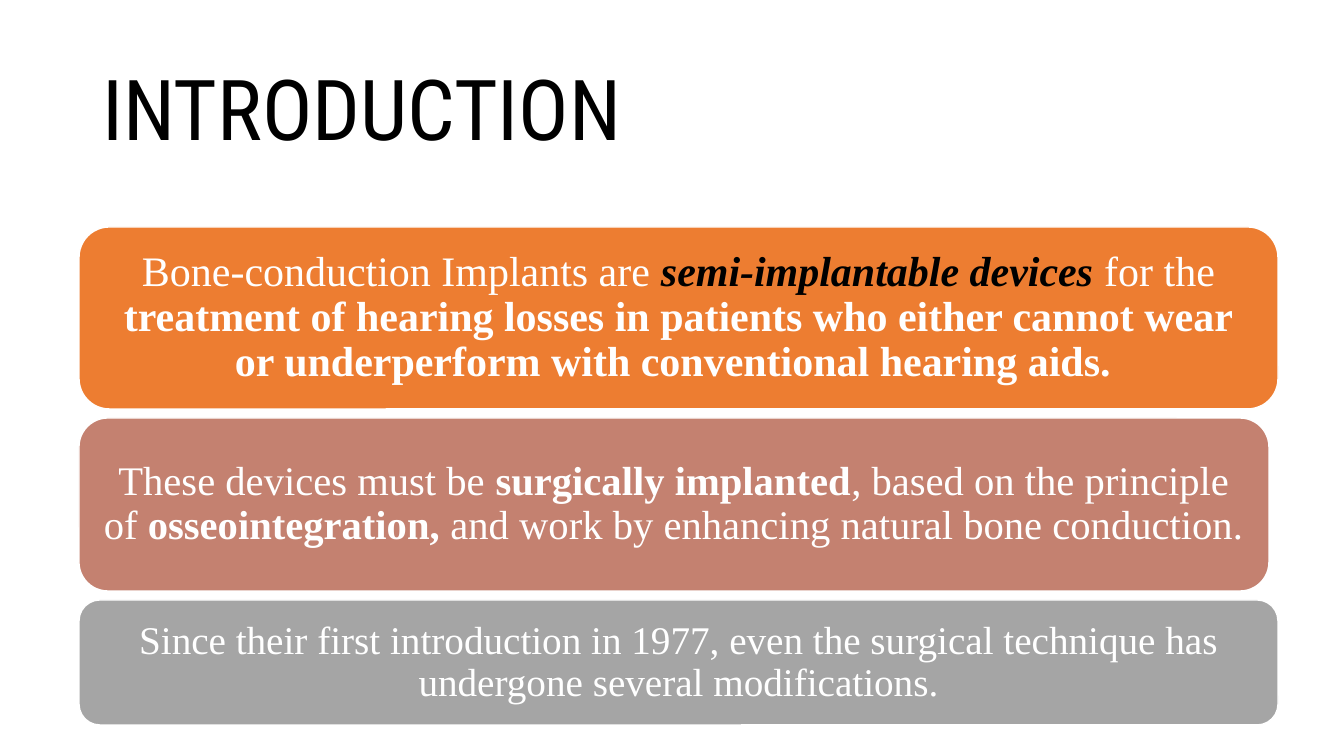
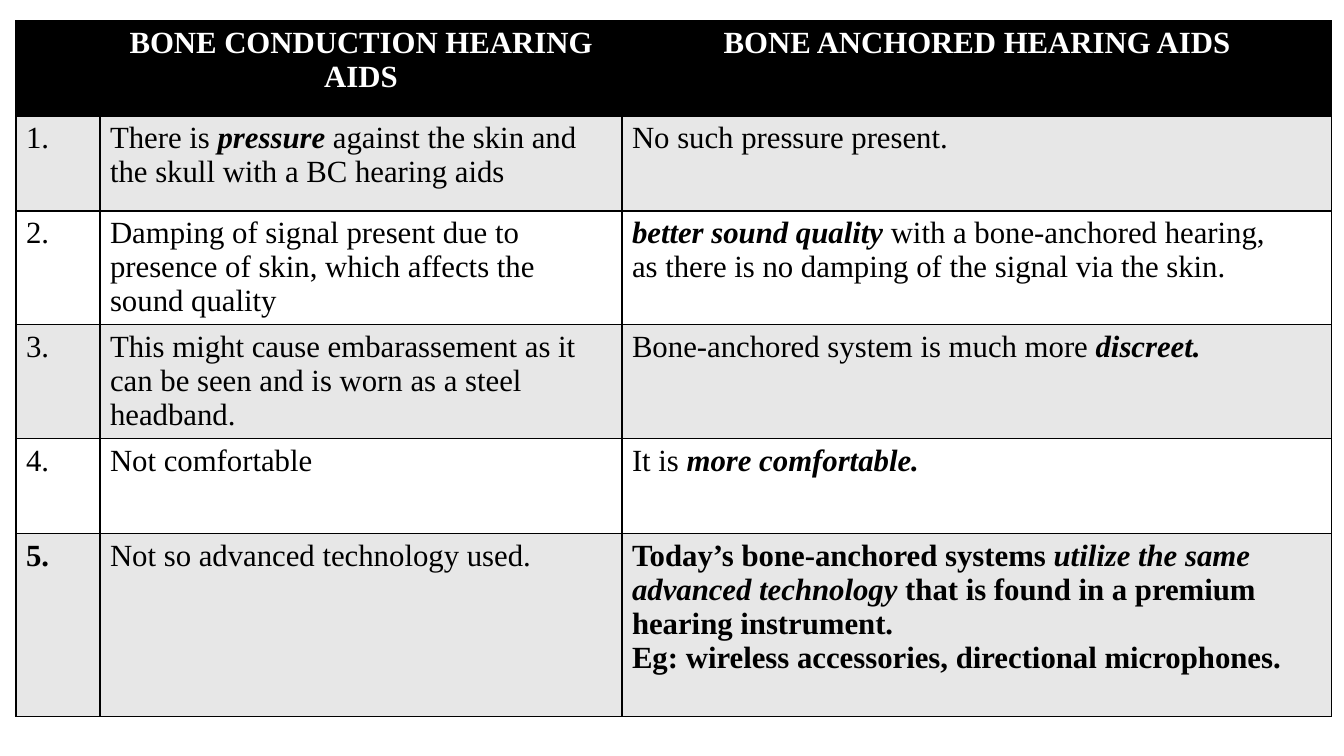
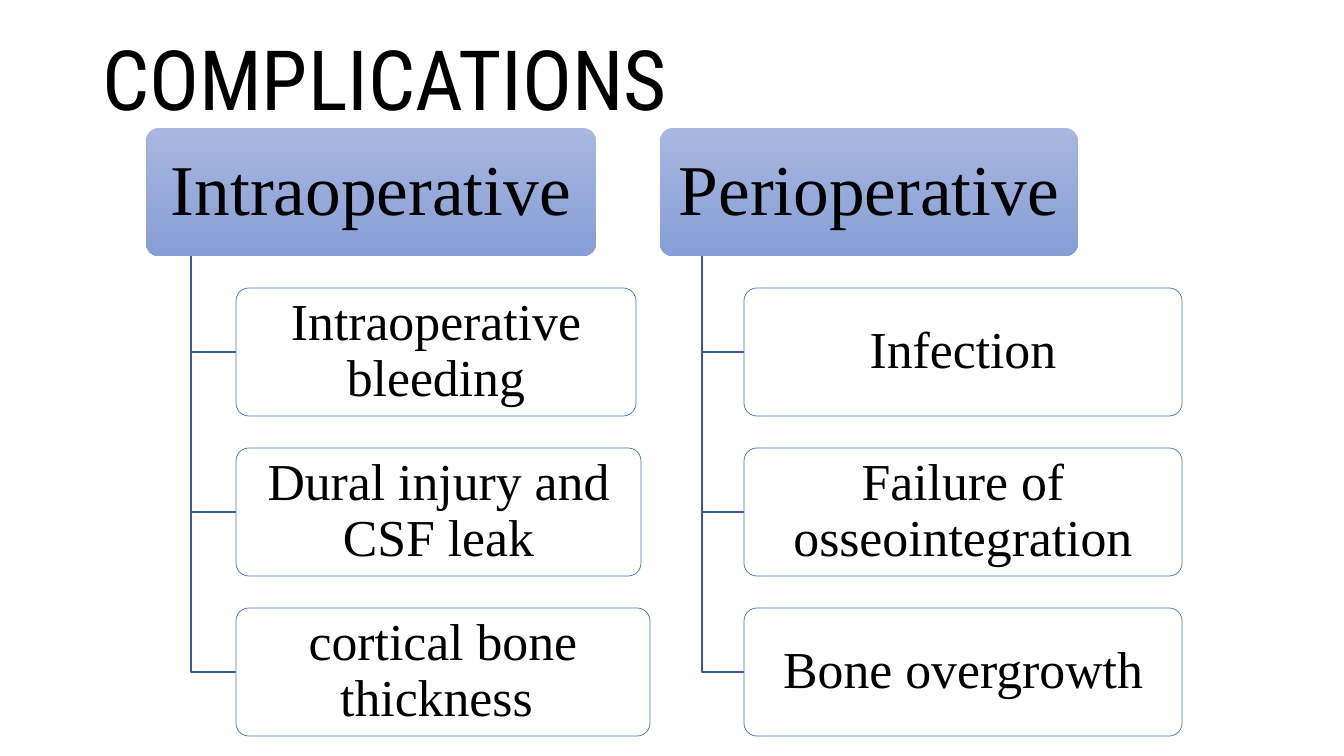
"""Build three slides on bone-conduction hearing implants."""
from dataclasses import dataclass

from lxml import etree
from pptx import Presentation
from pptx.dml.color import RGBColor
from pptx.enum.shapes import MSO_SHAPE
from pptx.enum.text import MSO_ANCHOR, MSO_AUTO_SIZE, PP_ALIGN
from pptx.oxml.ns import qn
from pptx.util import Emu, Pt

ROUNDED = MSO_SHAPE.ROUNDED_RECTANGLE
MIDDLE = MSO_ANCHOR.MIDDLE
NO_AUTOFIT = MSO_AUTO_SIZE.NONE
LEFT, CENTER = PP_ALIGN.LEFT, PP_ALIGN.CENTER
TITLE_ONLY, BLANK = 5, 6


@dataclass(frozen=True)
class Theme:
    title_font: str = "Roboto Condensed"
    body_font: str = "Times New Roman"
    black: str = "000000"
    white: str = "FFFFFF"
    band: str = "E7E7E7"
    header_top: str = "A8B7DF"
    header_bottom: str = "889ED7"
    box_line: str = "4472C4"
    branch_line: str = "365B9D"
    table_size: float = 22
    header_size: float = 51
    box_size: float = 37
    thin: float = 0.5
    line: float = 1


THEME = Theme()
SPAN_STYLES = {
    "plain": {},
    "bold": {"bold": True},
    "strong": {"bold": True, "italic": True},
    "dark": {"bold": True, "italic": True, "color": THEME.black},
    "head": {"bold": True, "color": THEME.white},
}

SLIDE_SIZE = (1344, 756)
STATEMENT_LEFT, STATEMENT_TOP, STATEMENT_GAP = 79, 227, 9
STATEMENTS = [
    {"width": 1199, "height": 182, "fill": "ED7D31", "size": 30, "spans": [
        ("Bone-conduction Implants are ", "plain"),
        ("semi-implantable devices ", "dark"),
        ("for the ", "plain"),
        ("treatment of hearing losses in patients who either cannot wear "
         "or underperform with conventional hearing aids. ", "bold")]},
    {"width": 1190, "height": 173, "fill": "C48170", "size": 29, "spans": [
        ("These devices must be ", "plain"),
        ("surgically implanted", "bold"),
        (", based on the principle of ", "plain"),
        ("osseointegration,", "bold"),
        (" and work by enhancing natural bone conduction. ", "plain")]},
    {"width": 1199, "height": 125, "fill": "A5A5A5", "size": 28, "spans": [
        ("Since their first introduction in 1977, even the surgical technique "
         "has undergone several modifications.", "plain")]},
]

TABLE_LEFT, TABLE_TOP = 16, 21
COLUMN_WIDTHS = [84, 522, 710]
ROW_HEIGHTS = [95, 95, 114, 114, 95, 183]
TABLE_ROWS = [
    [[[]], [[("BONE CONDUCTION HEARING AIDS", "head")]],
     [[("BONE ANCHORED HEARING AIDS", "head")]]],
    [[[("1.", "plain")]],
     [[("There is", "plain"), (" pressure ", "strong"),
       ("against the skin and the skull with a BC hearing aids", "plain")]],
     [[("No such pressure present.", "plain")]]],
    [[[("2.", "plain")]],
     [[("Damping of signal present due to presence of skin, "
        "which affects the sound quality", "plain")]],
     [[("better sound quality ", "strong"),
       ("with a bone-anchored hearing,", "plain")],
      [("as there is no damping of the signal via the skin.", "plain")]]],
    [[[("3.", "plain")]],
     [[("This might cause embarassement as it can be seen "
        "and is worn as a steel headband.", "plain")]],
     [[("Bone-anchored system is much more ", "plain"),
       ("discreet.", "strong")]]],
    [[[("4.", "plain")]],
     [[("Not comfortable", "plain")]],
     [[("It is ", "plain"), ("more comfortable.", "strong")]]],
    [[[("5.", "bold")]],
     [[("Not so advanced technology used.", "plain")]],
     [[("Today’s bone-anchored systems ", "bold"),
       ("utilize the same advanced technology", "strong"),
       (" that is found in a premium hearing instrument.", "bold")],
      [("Eg: wireless accessories, directional microphones.", "bold")]]],
]

TREE_TOP, TREE_BOX_HEIGHT, TREE_STEP = 128, 128, 160
TREES = [
    {"name": "Intraoperative", "left": 146, "width": 450, "children": [
        ("Intraoperative bleeding", 400),
        ("Dural injury and CSF leak", 405),
        ("cortical bone thickness ", 414)]},
    {"name": "Perioperative", "left": 660, "width": 418, "children": [
        ("Infection", 438),
        ("Failure of osseointegration", 438),
        ("Bone overgrowth", 438)]},
]


def px(value):
    return Emu(round(value * 914400 / 100.8))


def rgb(color):
    return RGBColor.from_string(color)


def write_paragraph(para, spans, size, color, align, font=THEME.body_font, spacing=None):
    para.alignment = align
    if spacing:
        para.line_spacing = spacing
    para.font.name = font
    para.font.size = Pt(size)
    para.font.color.rgb = rgb(color)
    for text, style in spans:
        span = para.add_run()
        span.text = text
        for key, value in SPAN_STYLES[style].items():
            if key == "color":
                span.font.color.rgb = rgb(value)
            else:
                setattr(span.font, key, value)


def add_titled_page(deck, title, height, size):
    page = deck.slides.add_slide(deck.slide_layouts[TITLE_ONLY])
    box = page.shapes.title
    box.left, box.top, box.width, box.height = map(px, (92, 40, 1159, height))
    frame = box.text_frame
    frame.auto_size = NO_AUTOFIT
    frame.vertical_anchor = MIDDLE
    write_paragraph(frame.paragraphs[0], [(title, "plain")], size, THEME.black,
                    LEFT, THEME.title_font, 0.9)
    return page


def add_box(page, place, spans, size, color, margins, line=None, fill=None, corner=None):
    box = page.shapes.add_shape(ROUNDED, *map(px, place))
    box.shadow.inherit = False
    if corner:
        box.adjustments[0] = corner
    if fill:
        box.fill.solid()
        box.fill.fore_color.rgb = rgb(fill)
    else:
        box.fill.gradient()
        box.fill.gradient_angle = 270
        for stop, shade in zip(box.fill.gradient_stops,
                               (THEME.header_top, THEME.header_bottom)):
            stop.color.rgb = rgb(shade)
    if line:
        box.line.color.rgb = rgb(line[0])
        box.line.width = Pt(line[1])
    else:
        box.line.fill.background()
    frame = box.text_frame
    frame.word_wrap = True
    frame.vertical_anchor = MIDDLE
    frame.margin_left = frame.margin_right = px(margins[0])
    frame.margin_top = frame.margin_bottom = px(margins[1])
    write_paragraph(frame.paragraphs[0], spans, size, color, CENTER, spacing=0.9)


def add_branch(page, start, corner, end):
    outline = page.shapes.build_freeform(*map(px, start))
    outline.add_line_segments([tuple(map(px, point)) for point in (corner, end)],
                              close=False)
    branch = outline.convert_to_shape()
    branch.shadow.inherit = False
    branch.fill.background()
    branch.line.color.rgb = rgb(THEME.branch_line)
    branch.line.width = Pt(THEME.line)


def border_cell(cell):
    properties = cell._tc.get_or_add_tcPr()
    for side in ("L", "R", "T", "B"):
        edge = etree.SubElement(properties, qn(f"a:ln{side}"), w=str(Pt(THEME.line)))
        paint = etree.SubElement(edge, qn("a:solidFill"))
        etree.SubElement(paint, qn("a:srgbClr"), val=THEME.black)


def build_introduction(deck):
    page = add_titled_page(deck, "INTRODUCTION", 146, 60)
    top = STATEMENT_TOP
    for item in STATEMENTS:
        place = (STATEMENT_LEFT, top, item["width"], item["height"])
        add_box(page, place, item["spans"], item["size"], THEME.white, (12, 6),
                (THEME.white, THEME.line), item["fill"])
        top += item["height"] + STATEMENT_GAP


def build_comparison(deck):
    page = deck.slides.add_slide(deck.slide_layouts[BLANK])
    place = (TABLE_LEFT, TABLE_TOP, sum(COLUMN_WIDTHS), sum(ROW_HEIGHTS))
    table = page.shapes.add_table(len(ROW_HEIGHTS), len(COLUMN_WIDTHS),
                                  *map(px, place)).table
    table.first_row = table.horz_banding = False
    for column, width in zip(table.columns, COLUMN_WIDTHS):
        column.width = px(width)
    for index, (row, height) in enumerate(zip(table.rows, ROW_HEIGHTS)):
        row.height = px(height)
        shade = THEME.band if index % 2 else THEME.white
        for cell, paragraphs in zip(row.cells, TABLE_ROWS[index]):
            border_cell(cell)
            cell.fill.solid()
            cell.fill.fore_color.rgb = rgb(shade if index else THEME.black)
            frame = cell.text_frame
            for number, spans in enumerate(paragraphs):
                para = frame.add_paragraph() if number else frame.paragraphs[0]
                write_paragraph(para, spans, THEME.table_size, THEME.black,
                                LEFT if index else CENTER)


def build_complications(deck):
    page = add_titled_page(deck, "COMPLICATIONS", 88, 59.4)
    for tree in TREES:
        left, width = tree["left"], tree["width"]
        trunk, child_left = round(left + width / 10), round(left + width / 5)
        add_box(page, (left, TREE_TOP, width, TREE_BOX_HEIGHT),
                [(tree["name"], "plain")], THEME.header_size, THEME.black,
                (11, 7), corner=0.1)
        for level, (text, child_width) in enumerate(tree["children"], 1):
            top = TREE_TOP + TREE_STEP * level
            middle = top + TREE_BOX_HEIGHT // 2
            add_branch(page, (trunk, TREE_TOP + TREE_BOX_HEIGHT),
                       (trunk, middle), (child_left, middle))
            add_box(page, (child_left, top, child_width, TREE_BOX_HEIGHT),
                    [(text, "plain")], THEME.box_size, THEME.black, (8, 5),
                    (THEME.box_line, THEME.thin), THEME.white, 0.1)


def main():
    deck = Presentation()
    deck.slide_width, deck.slide_height = map(px, SLIDE_SIZE)
    build_introduction(deck)
    build_comparison(deck)
    build_complications(deck)
    deck.save("out.pptx")


if __name__ == "__main__":
    main()
